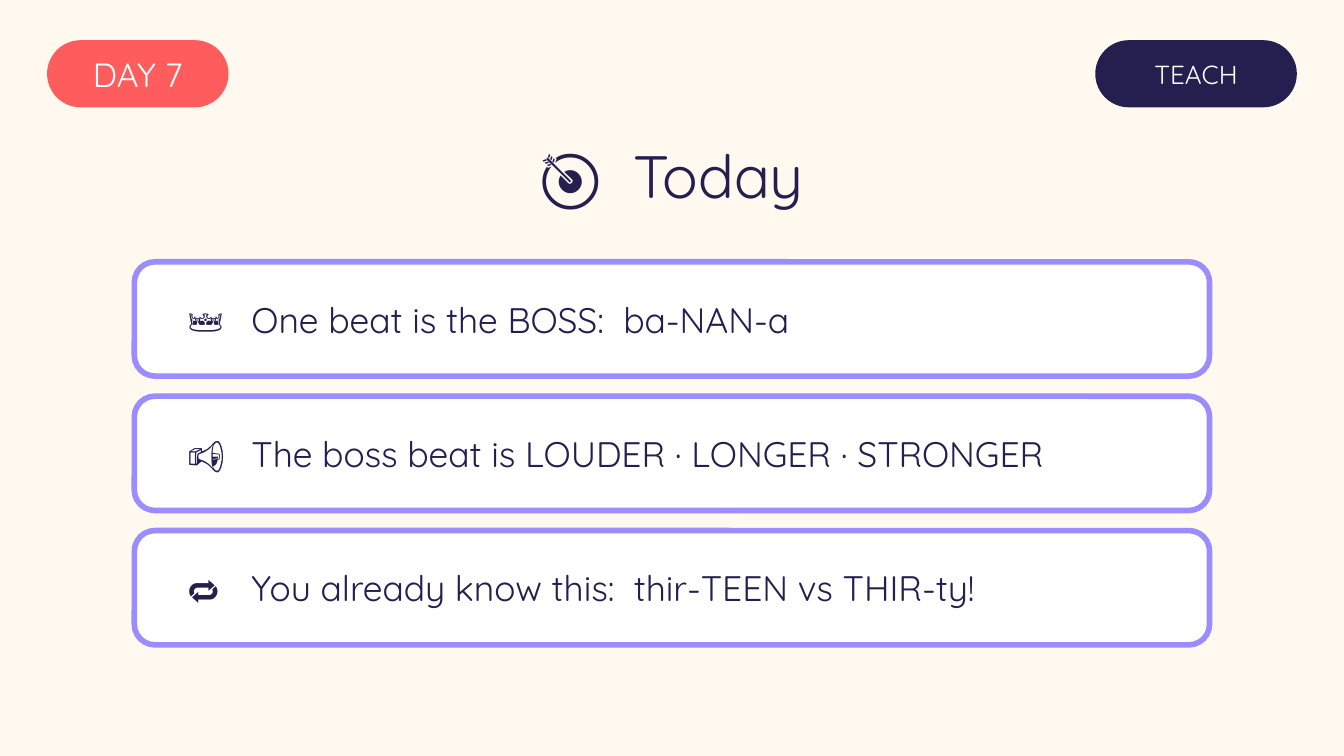
from pptx import Presentation
from pptx.dml.color import RGBColor
from pptx.enum.shapes import MSO_SHAPE
from pptx.enum.text import MSO_ANCHOR, PP_ALIGN
from pptx.util import Cm, Pt
from lxml.etree import SubElement
from pptx.oxml.ns import qn

CREAM = RGBColor(0xFF, 0xF9, 0xEF)
CORAL = RGBColor(0xFF, 0x5D, 0x5D)
NAVY = RGBColor(0x24, 0x1F, 0x4E)
LILAC = RGBColor(0x9B, 0x8C, 0xFF)
WHITE = RGBColor(0xFF, 0xFF, 0xFF)


def panel(left, top, width, height, bend, fill):
    shape = deck.shapes.add_shape(
        MSO_SHAPE.ROUNDED_RECTANGLE, Cm(left), Cm(top), Cm(width), Cm(height))
    shape.adjustments[0] = bend
    shape.shadow.inherit = False
    shape.fill.solid()
    shape.fill.fore_color.rgb = fill
    shape.line.fill.background()
    return shape


def write(shape, text, size, color, align, tab=None):
    frame = shape.text_frame
    frame.word_wrap = True
    frame.vertical_anchor = MSO_ANCHOR.MIDDLE
    para = frame.paragraphs[0]
    para.text = text
    para.alignment = align
    if tab:
        stops = SubElement(para._p.get_or_add_pPr(), qn("a:tabLst"))
        SubElement(stops, qn("a:tab"), pos=str(Cm(tab)), algn="l")
    para.font.name = "Quicksand"
    para.font.size = Pt(size)
    para.font.color.rgb = color
    return frame


show = Presentation()
show.slide_width = Cm(25.4)
show.slide_height = Cm(14.29)
deck = show.slides.add_slide(show.slide_layouts[6])
deck.background.fill.solid()
deck.background.fill.fore_color.rgb = CREAM

for text, left, width, size, fill in (
    ("DAY 7", 0.89, 3.43, 18, CORAL),
    ("TEACH", 20.7, 3.81, 14, NAVY),
):
    pill = panel(left, 0.76, width, 1.27, 0.5, fill)
    frame = write(pill, text, size, WHITE, PP_ALIGN.CENTER)
    frame.margin_left = frame.margin_right = 0
    frame.margin_top = frame.margin_bottom = 0

title = deck.shapes.add_textbox(0, Cm(2.41), show.slide_width, Cm(1.78))
write(title, "🎯  Today", 32, NAVY, PP_ALIGN.CENTER)

goals = (
    ("👑", "One beat is the BOSS:  ba-NAN-a"),
    ("📢", "The boss beat is LOUDER · LONGER · STRONGER"),
    ("🔁", "You already know this:  thir-TEEN vs THIR-ty!"),
)
for row, (icon, text) in enumerate(goals):
    card = panel(2.54, 4.95 + row * 2.54, 20.32, 2.16, 0.18, WHITE)
    card.line.color.rgb = LILAC
    card.line.width = Pt(3)
    frame = write(card, f"{icon}\t{text}", 19, NAVY, PP_ALIGN.LEFT, 1.2)
    frame.margin_left = Cm(0.9)

show.save("out.pptx")
